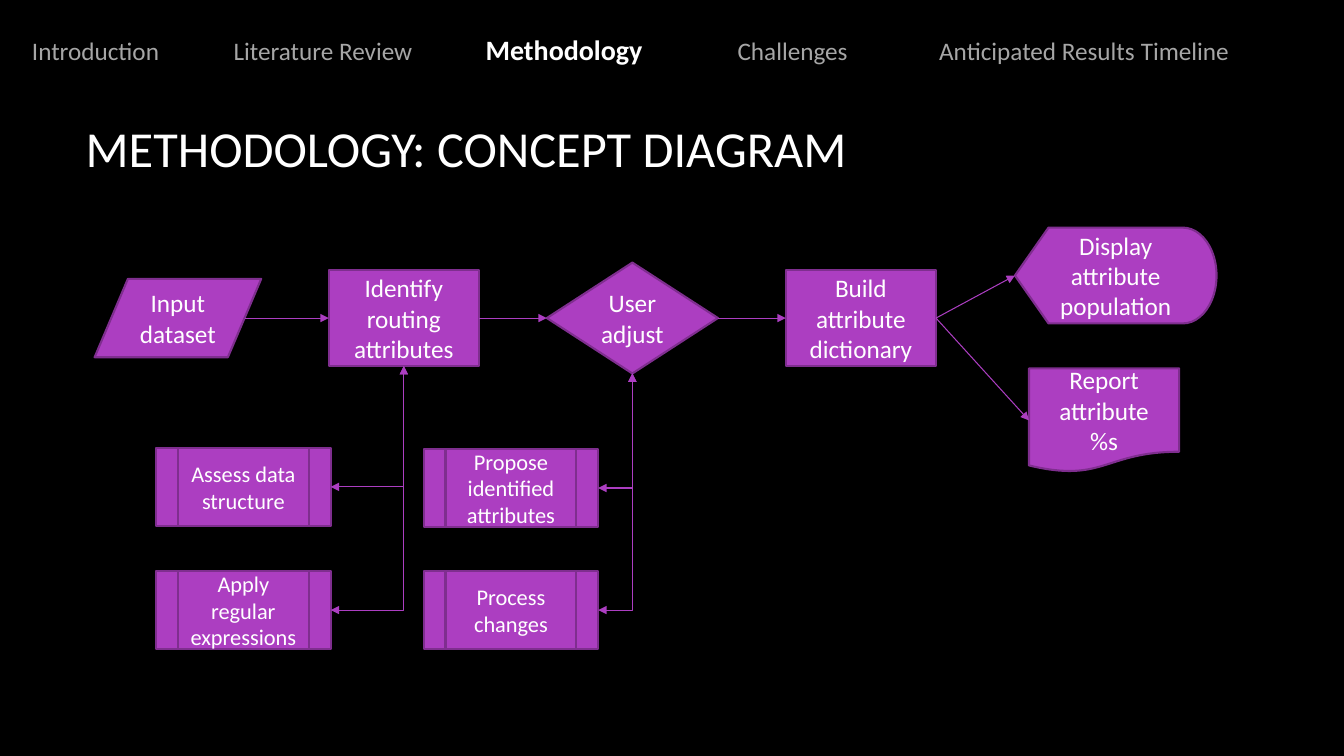
from dataclasses import dataclass

from lxml import etree
from pptx import Presentation
from pptx.dml.color import RGBColor
from pptx.enum.shapes import MSO_CONNECTOR, MSO_SHAPE
from pptx.enum.text import MSO_ANCHOR, PP_ALIGN
from pptx.oxml.ns import qn
from pptx.util import Pt

PROCESS = MSO_SHAPE.FLOWCHART_PROCESS
DATA = MSO_SHAPE.FLOWCHART_DATA
DECISION = MSO_SHAPE.FLOWCHART_DECISION
DISPLAY = MSO_SHAPE.FLOWCHART_DISPLAY
DOCUMENT = MSO_SHAPE.FLOWCHART_DOCUMENT
SUBPROCESS = MSO_SHAPE.FLOWCHART_PREDEFINED_PROCESS
STRAIGHT, ELBOW = MSO_CONNECTOR.STRAIGHT, MSO_CONNECTOR.ELBOW
CENTER, LEFT = PP_ALIGN.CENTER, PP_ALIGN.LEFT
MIDDLE = MSO_ANCHOR.MIDDLE
LEFT_SITE, RIGHT_SITE = 1, 3

FONT = "Calibri"
BLACK, WHITE, GREY = "000000", "FFFFFF", "A6A6A6"
PURPLE, DARK_PURPLE = "AC3EC1", "7F2E8F"


@dataclass
class Node:
    name: str
    kind: int
    left: float
    top: float
    width: float
    height: float
    text: str
    size: int = 18


@dataclass
class Section:
    title: str
    tab: float
    current: bool = False


BOX = (107.3, 68.4)
SUB = (124.6, 55.6)
NODES = [
    Node("identify", PROCESS, 234.8, 193, *BOX, "Identify routing attributes"),
    Node("input", DATA, 67.6, 199.2, 119, 56, "Input dataset"),
    Node("adjust", DECISION, 390.6, 187.6, 122.2, 79.2, "User adjust"),
    Node("build", PROCESS, 561.3, 193, *BOX, "Build attribute dictionary"),
    Node("display", DISPLAY, 725, 162.6, 144, BOX[1], "Display attribute population"),
    Node("report", DOCUMENT, 735, 263.2, BOX[0], 74.2, "Report attribute\n%s"),
    Node("assess", SUBPROCESS, 111.6, 320, *SUB, "Assess data structure", 16),
    Node("apply", SUBPROCESS, 111.6, 408, *SUB, "Apply regular expressions", 16),
    Node("propose", SUBPROCESS, 302.7, 320.8, *SUB, "Propose identified attributes", 16),
    Node("process", SUBPROCESS, 302.7, 408, *SUB, "Process changes", 16),
]
FLOWS = [("identify", "adjust"), ("adjust", "build"), ("build", "display"), ("build", "report")]
SUBTASKS = [("identify", "assess"), ("identify", "apply"),
            ("adjust", "propose"), ("adjust", "process")]
SECTIONS = [
    Section("Introduction", 0),
    Section("Literature Review", 144),
    Section("Methodology", 324, current=True),
    Section("Challenges", 504),
    Section("Anticipated Results", 648),
    Section("Timeline", 792),
]


def rgb(value: str) -> RGBColor:
    return RGBColor.from_string(value)


def set_font(font, size: float, color: str) -> None:
    font.name, font.size = FONT, Pt(size)
    font.color.rgb = rgb(color)


def add_node(slide, node: Node):
    s = slide.shapes.add_shape(node.kind, Pt(node.left), Pt(node.top),
                               Pt(node.width), Pt(node.height))
    s.shadow.inherit = False
    s.fill.solid()
    s.fill.fore_color.rgb = rgb(PURPLE)
    s.line.color.rgb = rgb(DARK_PURPLE)
    s.line.width = Pt(1.5)
    tf = s.text_frame
    tf.word_wrap, tf.vertical_anchor = True, MIDDLE
    tf.text = node.text
    for p in tf.paragraphs:
        p.alignment = CENTER
        set_font(p.font, node.size, WHITE)
    return s


def style_connector(c, *arrow_ends: str) -> None:
    c.line.color.rgb = rgb(PURPLE)
    c.line.width = Pt(0.75)
    ln = c.line._get_or_add_ln()
    for end in arrow_ends:
        etree.SubElement(ln, qn(f"a:{end}"), type="triangle")
    etree.SubElement(c._element.spPr, qn("a:effectLst"))


def add_flow(slide, target, start=None, start_x: float = 0) -> None:
    """Arrow into the left side of target, from start or from a point level with it."""
    y = target.top + target.height // 2
    c = slide.shapes.add_connector(STRAIGHT, Pt(start_x), y, target.left, y)
    if start is not None:
        c.begin_connect(start, RIGHT_SITE)
    c.end_connect(target, LEFT_SITE)
    style_connector(c, "tailEnd")


def add_elbow(slide, parent, child) -> None:
    """Two-way arrow from the bottom of parent, down and left to the side of child."""
    x1, y1 = parent.left + parent.width // 2, parent.top + parent.height
    x2, y2 = child.left + child.width, child.top + child.height // 2
    mid_x, mid_y = (x1 + x2) // 2, (y1 + y2) // 2
    half_run, half_drop = (x1 - x2) // 2, (y2 - y1) // 2
    c = slide.shapes.add_connector(ELBOW, mid_x - half_drop, mid_y - half_run,
                                   mid_x + half_drop, mid_y + half_run)
    # One bend, turned a quarter clockwise
    spPr = c._element.spPr
    spPr.find(qn("a:prstGeom")).set("prst", "bentConnector2")
    spPr.find(qn("a:xfrm")).set("rot", "5400000")
    style_connector(c, "headEnd", "tailEnd")


def add_navigation(slide) -> None:
    tf = slide.shapes.add_textbox(Pt(15.8), Pt(19.4), Pt(917), Pt(31.5)).text_frame
    tf.word_wrap = True
    p = tf.paragraphs[0]
    tabs = etree.SubElement(p._p.get_or_add_pPr(), qn("a:tabLst"))
    for section in SECTIONS[1:]:
        etree.SubElement(tabs, qn("a:tab"), pos=str(Pt(section.tab)), algn="l")
    set_font(p.font, 18, GREY)
    for i, section in enumerate(SECTIONS):
        if i:
            p.add_run().text = "\t"
        r = p.add_run()
        r.text = section.title
        if section.current:
            set_font(r.font, 20, WHITE)
            r.font.bold = True


def main() -> None:
    prs = Presentation()
    prs.slide_width, prs.slide_height = Pt(960), Pt(540)
    slide = prs.slides.add_slide(prs.slide_layouts[5])
    slide.background.fill.solid()
    slide.background.fill.fore_color.rgb = rgb(BLACK)

    # Title
    title = slide.shapes.title
    title.left, title.top, title.width, title.height = Pt(54), Pt(48.2), Pt(798), Pt(114.5)
    tf = title.text_frame
    tf.text, tf.vertical_anchor = "METHODOLOGY: CONCEPT DIAGRAM", MIDDLE
    p = tf.paragraphs[0]
    p.alignment = LEFT
    set_font(p.font, 36, WHITE)

    # Section navigation
    add_navigation(slide)

    # Flowchart
    shapes = {node.name: add_node(slide, node) for node in NODES}
    add_flow(slide, shapes["identify"], start_x=175)
    for start, target in FLOWS:
        add_flow(slide, shapes[target], shapes[start])
    for parent, child in SUBTASKS:
        add_elbow(slide, shapes[parent], shapes[child])

    prs.save("out.pptx")


if __name__ == "__main__":
    main()
